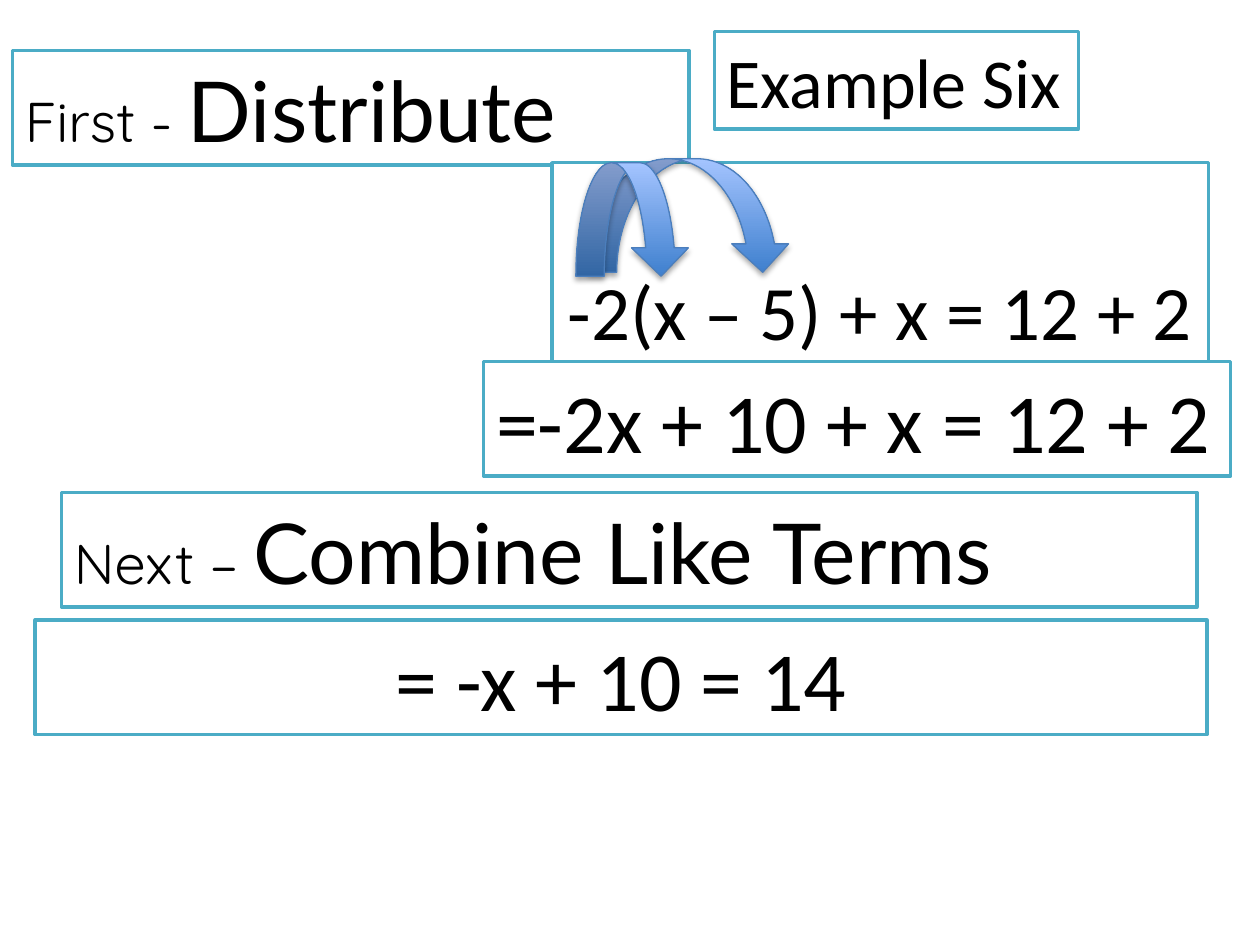
from lxml import etree
from pptx import Presentation
from pptx.dml.color import RGBColor
from pptx.enum.shapes import MSO_SHAPE
from pptx.enum.text import MSO_ANCHOR, PP_ALIGN
from pptx.oxml.ns import qn
from pptx.util import Cm, Pt

RECT, ARROW = MSO_SHAPE.RECTANGLE, MSO_SHAPE.CURVED_DOWN_ARROW
LEFT, MID = PP_ALIGN.LEFT, PP_ALIGN.CENTER
BASE = MSO_ANCHOR.BOTTOM
COLORS = {"text": "000000", "paper": "FFFFFF", "frame": "4BACC6",
          "deep": "3F80CE", "pale": "A4C4FF", "edge": "4B7EBC"}
ROW = 2.31  # height of a one-line box


def color(name):
    return RGBColor.from_string(COLORS[name])


def add_shape(slide, kind, box, line, width):
    shape = slide.shapes.add_shape(kind, *(Cm(v) for v in box))
    shape.shadow.inherit = False
    shape.line.color.rgb = color(line)
    shape.line.width = Pt(width)
    return shape


def style(font, name, size):
    font.name, font.size = name, Pt(size)
    font.color.rgb = color("text")


def add_frame(slide, box, align=LEFT):
    """Add a white framed box and return its paragraph."""
    shape = add_shape(slide, RECT, box, "frame", 2)
    shape.fill.solid()
    shape.fill.fore_color.rgb = color("paper")
    frame = shape.text_frame
    frame.word_wrap = True
    frame.vertical_anchor = BASE
    para = frame.paragraphs[0]
    para.alignment = align
    return para


def add_line(slide, box, text, size=48, align=LEFT):
    para = add_frame(slide, box, align)
    para.text = text
    style(para.font, "Calibri", size)


def add_step(slide, box, lead, task):
    para = add_frame(slide, box)
    for text, name, size in ((lead, "Quicksand", 32), (task, "Lato", 48)):
        run = para.add_run()
        run.text = text
        style(run.font, name, size)


def add_arrow(slide, box):
    shape = add_shape(slide, ARROW, box, "edge", 0.75)
    fill = shape.fill
    fill.gradient()
    fill.gradient_angle = 90
    for stop, name in zip(fill.gradient_stops, ("deep", "pale")):
        stop.color.rgb = color(name)
    # Soft shadow below the arrow
    effects = shape._element.spPr.find(qn("a:effectLst"))
    shadow = etree.SubElement(effects, qn("a:outerShdw"), blurRad="40000",
                              dist="23000", dir="5400000", rotWithShape="0")
    tint = etree.SubElement(shadow, qn("a:srgbClr"), val=COLORS["text"])
    etree.SubElement(tint, qn("a:alpha"), val="35000")


def add_problem(slide, box, text):
    """Add the equation with two arrows from the factor to each term."""
    left, top = box[:2]
    add_line(slide, box, text, 44, MID)
    add_arrow(slide, (left + 0.73, top - 0.08, 4.09, 2.29))
    add_arrow(slide, (left + 0.48, top, 2.29, 2.29))


def main():
    prs = Presentation()
    prs.slide_width, prs.slide_height = Cm(25.4), Cm(19.05)
    slide = prs.slides.add_slide(prs.slide_layouts[6])

    # Distribute
    add_step(slide, (0.25, 1.02, 13.64, ROW), "First - ", "Distribute")
    add_line(slide, (9.75, 7.29, 15.06, ROW), "=-2x + 10 + x = 12 + 2")
    add_problem(slide, (11.13, 3.28, 13.23, 4.01), "-2(x – 5) + x = 12 + 2")

    # Combine
    add_step(slide, (1.24, 9.93, 22.89, ROW), "Next – ", "Combine Like Terms")
    add_line(slide, (0.71, 12.5, 23.62, ROW), "= -x + 10 = 14", align=MID)

    # Title
    add_line(slide, (14.4, 0.64, 7.34, 1.96), "Example Six", 40)

    prs.save("out.pptx")


if __name__ == "__main__":
    main()
